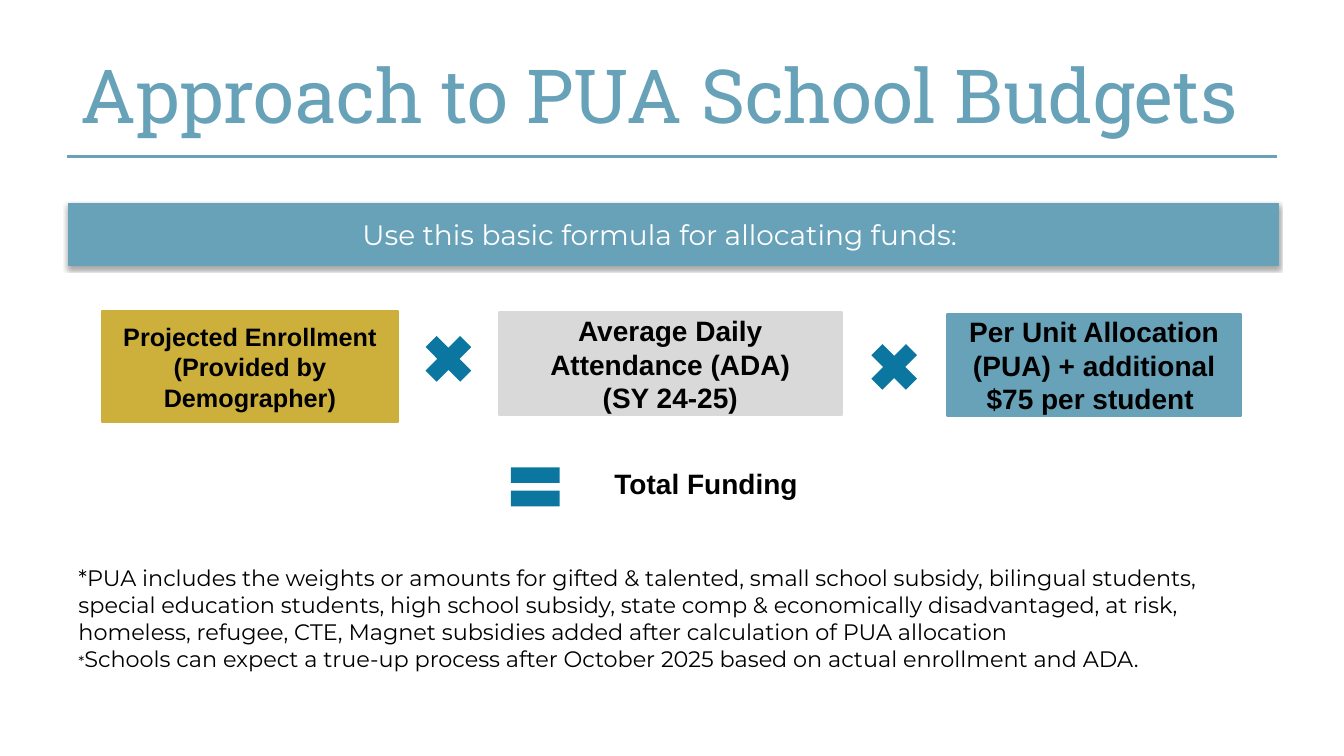
from lxml import etree
from pptx import Presentation
from pptx.dml.color import RGBColor
from pptx.enum.shapes import MSO_CONNECTOR, MSO_SHAPE
from pptx.enum.text import MSO_ANCHOR, PP_ALIGN
from pptx.oxml.ns import qn
from pptx.util import Pt

RECT, TIMES, EQUALS = MSO_SHAPE.RECTANGLE, MSO_SHAPE.MATH_MULTIPLY, MSO_SHAPE.MATH_EQUAL
LEFT, CENTER = PP_ALIGN.LEFT, PP_ALIGN.CENTER
TOP, MIDDLE = MSO_ANCHOR.TOP, MSO_ANCHOR.MIDDLE
TEAL, BLUE, GOLD, GRAY = "67A2B9", "0B76A0", "CDB03C", "D9D9D9"
BLACK, WHITE = "000000", "FFFFFF"


def rgb(hex_color):
    return RGBColor.from_string(hex_color)


def write(shape, paragraphs, font, color=BLACK, bold=False, align=CENTER, anchor=MIDDLE):
    """Fill a shape with paragraphs, each a list of (text, size) runs."""
    frame = shape.text_frame
    frame.word_wrap = True
    frame.vertical_anchor = anchor
    for i, runs in enumerate(paragraphs):
        paragraph = frame.add_paragraph() if i else frame.paragraphs[0]
        paragraph.alignment = align
        for text, size in runs:
            run = paragraph.add_run()
            run.text = text
            run.font.name = font
            run.font.size = Pt(size)
            run.font.bold = bold
            run.font.color.rgb = rgb(color)


prs = Presentation()
prs.slide_width, prs.slide_height = Pt(960), Pt(540)
slide = prs.slides.add_slide(prs.slide_layouts[6])
shapes = slide.shapes

# Title and rule below it
title = shapes.add_textbox(Pt(48.2), Pt(21.6), Pt(864), Pt(90))
write(title, [[("Approach to PUA School Budgets", 53.3)]], "Roboto Slab", TEAL, align=LEFT)
title.text_frame.margin_left = title.text_frame.margin_right = Pt(9.6)
title.text_frame.margin_top = title.text_frame.margin_bottom = Pt(4.8)

rule = shapes.add_connector(MSO_CONNECTOR.STRAIGHT, Pt(48.2), Pt(111.6), Pt(912.2), Pt(111.6))
rule.line.color.rgb = rgb(TEAL)
rule.line.width = Pt(2)
etree.SubElement(rule._element.spPr, qn("a:effectLst"))

# Banner with a soft shadow
banner = shapes.add_shape(RECT, Pt(49), Pt(145.5), Pt(864), Pt(44))
banner.fill.solid()
banner.fill.fore_color.rgb = rgb(TEAL)
banner.line.color.rgb = rgb(TEAL)
banner.line.width = Pt(0.75)
banner.shadow.inherit = False
effects = banner._element.spPr.find(qn("a:effectLst"))
shadow = etree.SubElement(effects, qn("a:outerShdw"), blurRad=str(Pt(3.1)), dist=str(Pt(1.8)),
                          dir="5400000", rotWithShape="0")
shadow_color = etree.SubElement(shadow, qn("a:srgbClr"), val=BLACK)
etree.SubElement(shadow_color, qn("a:alpha"), val="35000")

banner_text = shapes.add_textbox(Pt(170), Pt(152), Pt(602.6), Pt(31.7))
write(banner_text, [[("Use this basic formula for allocating funds:", 20)]],
      "Montserrat", WHITE, anchor=TOP)

# Factors of the formula
factors = [
    (72.7, 222.5, 211.7, 79.2, GOLD, 18, ["Projected Enrollment", "(Provided by Demographer)"]),
    (356.4, 223.2, 244.8, 73.4, GRAY, 20, ["Average Daily Attendance (ADA)", "(SY 24-25)"]),
    (676.8, 224, 209.5, 73.4, TEAL, 20,
     ["Per Unit Allocation (PUA) + additional $75 per student "]),
]
for x, y, width, height, color, size, lines in factors:
    factor = shapes.add_shape(RECT, Pt(x), Pt(y), Pt(width), Pt(height))
    factor.shadow.inherit = False
    factor.fill.solid()
    factor.fill.fore_color.rgb = rgb(color)
    factor.line.color.rgb = rgb(color)
    factor.line.width = Pt(1.5)
    write(factor, [[(line, size)] for line in lines], "Arial", bold=True)

# Operators
for kind, x, y in [(TIMES, 296.6, 232.6), (TIMES, 615, 238.4), (EQUALS, 358.6, 324)]:
    operator = shapes.add_shape(kind, Pt(x), Pt(y), Pt(47.5), Pt(47.5))
    operator.shadow.inherit = False
    operator.fill.solid()
    operator.fill.fore_color.rgb = rgb(BLUE)
    operator.line.fill.background()

# Result
total = shapes.add_textbox(Pt(406.8), Pt(321.8), Pt(195.1), Pt(47.5))
write(total, [[("Total Funding", 20)]], "Arial", bold=True)

# Footnotes
footnotes = shapes.add_textbox(Pt(49), Pt(399.6), Pt(864), Pt(101.5))
write(footnotes, [
    [("*PUA includes the weights or amounts for gifted & talented, small school subsidy, "
      "bilingual students, special education students, high school subsidy, state comp & "
      "economically disadvantaged, at risk, homeless, refugee, CTE, Magnet subsidies added "
      "after calculation of PUA allocation", 16)],
    [("*", 11),
     ("Schools can expect a true-up process after October 2025 based on actual "
      "enrollment and ADA.", 16)],
], "Montserrat", align=LEFT, anchor=TOP)

prs.save("out.pptx")
